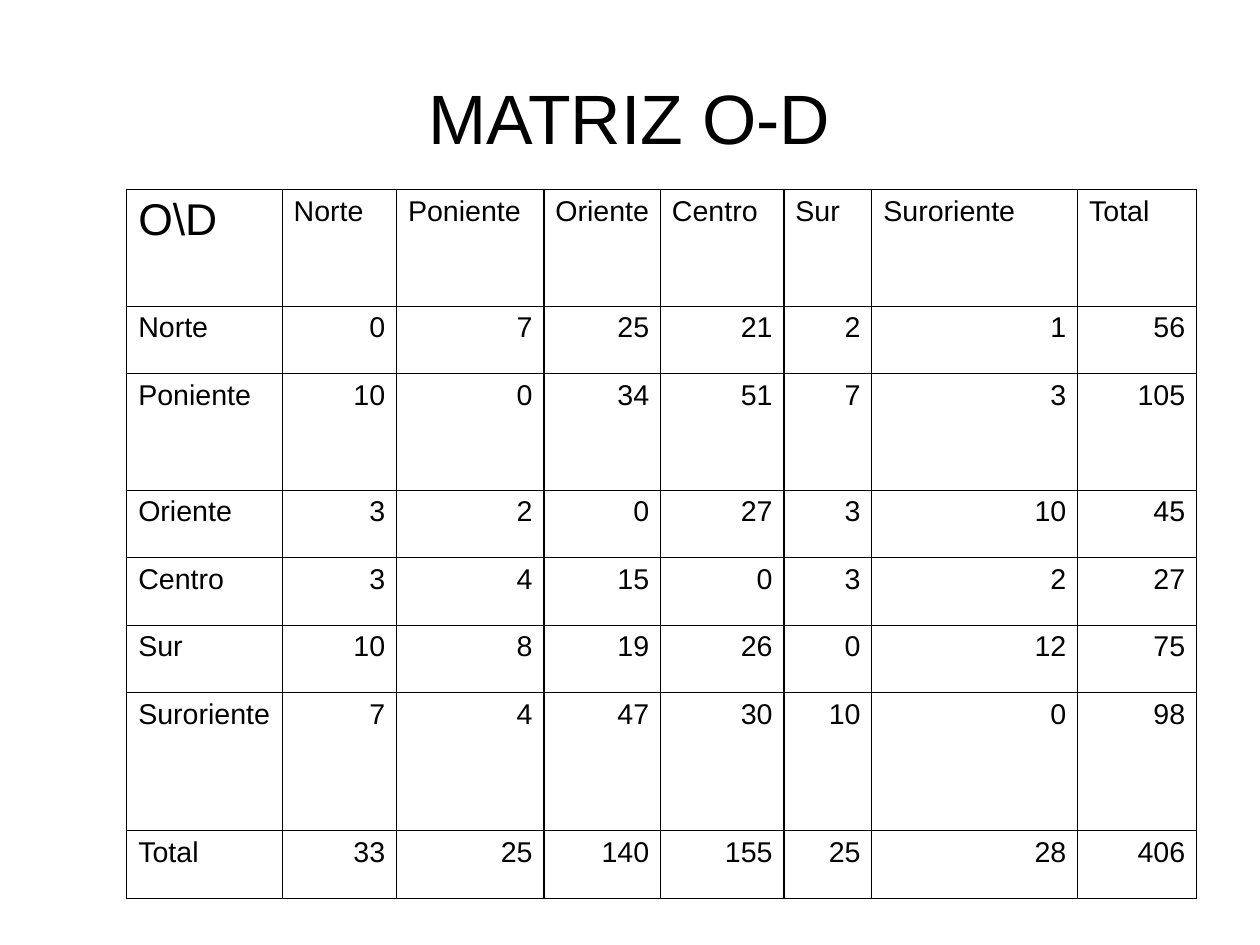
from dataclasses import dataclass

from lxml.etree import SubElement
from pptx import Presentation
from pptx.dml.color import RGBColor
from pptx.enum.text import MSO_ANCHOR as Anchor, PP_ALIGN as Align
from pptx.oxml.ns import qn
from pptx.slide import Slide
from pptx.table import _Cell as Cell
from pptx.text.text import _Paragraph as Paragraph
from pptx.util import Inches, Pt

COLORS = {"ink": "000000"}
FONT = "Arial"
CM_PER_INCH = 2.54
SLIDE_WIDTH_CM, SLIDE_HEIGHT_CM = 28, 21
BORDER_WIDTH = Pt(0.75)
BORDER_SIDES = ("a:lnL", "a:lnR", "a:lnT", "a:lnB")
COLUMN_WIDTHS = (1.36, 1, 1.29, 1.02, 1.08, 0.77, 1.8, 1.04)


@dataclass
class Origin:
    zone: str
    trips: list[int]
    height: float = 0.59


ORIGINS = [
    Origin("Norte", [0, 7, 25, 21, 2, 1]),
    Origin("Poniente", [10, 0, 34, 51, 7, 3], 1.02),
    Origin("Oriente", [3, 2, 0, 27, 3, 10]),
    Origin("Centro", [3, 4, 15, 0, 3, 2]),
    Origin("Sur", [10, 8, 19, 26, 0, 12]),
    Origin("Suroriente", [7, 4, 47, 30, 10, 0], 1.21),
]
HEADER_HEIGHT = 1.02


def format_paragraph(paragraph: Paragraph, size: int, align: Align) -> None:
    paragraph.alignment = align
    for run in paragraph.runs:
        run.font.name = FONT
        run.font.size = Pt(size)
        run.font.color.rgb = RGBColor.from_string(COLORS["ink"])


def draw_borders(cell: Cell) -> None:
    properties = cell._tc.get_or_add_tcPr()
    for position, side in enumerate(BORDER_SIDES):
        line = SubElement(properties, qn(side), w=str(BORDER_WIDTH))
        fill = SubElement(line, qn("a:solidFill"))
        SubElement(fill, qn("a:srgbClr"), val=COLORS["ink"])
        properties.insert(position, line)


def draw_cell(cell: Cell, text: str, size: int, align: Align) -> None:
    cell.text_frame.text = text
    format_paragraph(cell.text_frame.paragraphs[0], size, align)
    cell.fill.background()
    draw_borders(cell)


def draw_title(slide: Slide, text: str) -> None:
    title = slide.shapes.add_textbox(Inches(0.55), Inches(0.33), Inches(9.92), Inches(1.38))
    frame = title.text_frame
    frame.word_wrap = True
    frame.vertical_anchor = Anchor.MIDDLE
    frame.margin_left = frame.margin_right = frame.margin_top = frame.margin_bottom = 0
    frame.text = text
    format_paragraph(frame.paragraphs[0], 44, Align.CENTER)


def draw_matrix(slide: Slide, origins: list[Origin]) -> None:
    totals = Origin("Total", [sum(column) for column in zip(*(origin.trips for origin in origins))])
    rows = [*origins, totals]
    contents = [["O\\D", *(row.zone for row in rows)]]
    contents += [[row.zone, *map(str, row.trips), str(sum(row.trips))] for row in rows]
    heights = [HEADER_HEIGHT, *(row.height for row in rows)]

    table = slide.shapes.add_table(
        len(heights), len(COLUMN_WIDTHS), Inches(1.11), Inches(1.66),
        Inches(sum(COLUMN_WIDTHS)), Inches(sum(heights)),
    ).table
    table.first_row = table.horz_banding = False
    for column, width in zip(table.columns, COLUMN_WIDTHS):
        column.width = Inches(width)
    for row_index, (row, height) in enumerate(zip(table.rows, heights)):
        row.height = Inches(height)
        for column_index, cell in enumerate(row.cells):
            is_corner = row_index == column_index == 0
            is_number = row_index > 0 and column_index > 0
            draw_cell(
                cell,
                contents[row_index][column_index],
                28 if is_corner else 18,
                Align.RIGHT if is_number else Align.LEFT,
            )


def main() -> None:
    presentation = Presentation()
    presentation.slide_width = Inches(SLIDE_WIDTH_CM / CM_PER_INCH)
    presentation.slide_height = Inches(SLIDE_HEIGHT_CM / CM_PER_INCH)
    slide = presentation.slides.add_slide(presentation.slide_layouts[6])
    draw_title(slide, "MATRIZ O-D")
    draw_matrix(slide, ORIGINS)
    presentation.save("out.pptx")


if __name__ == "__main__":
    main()
